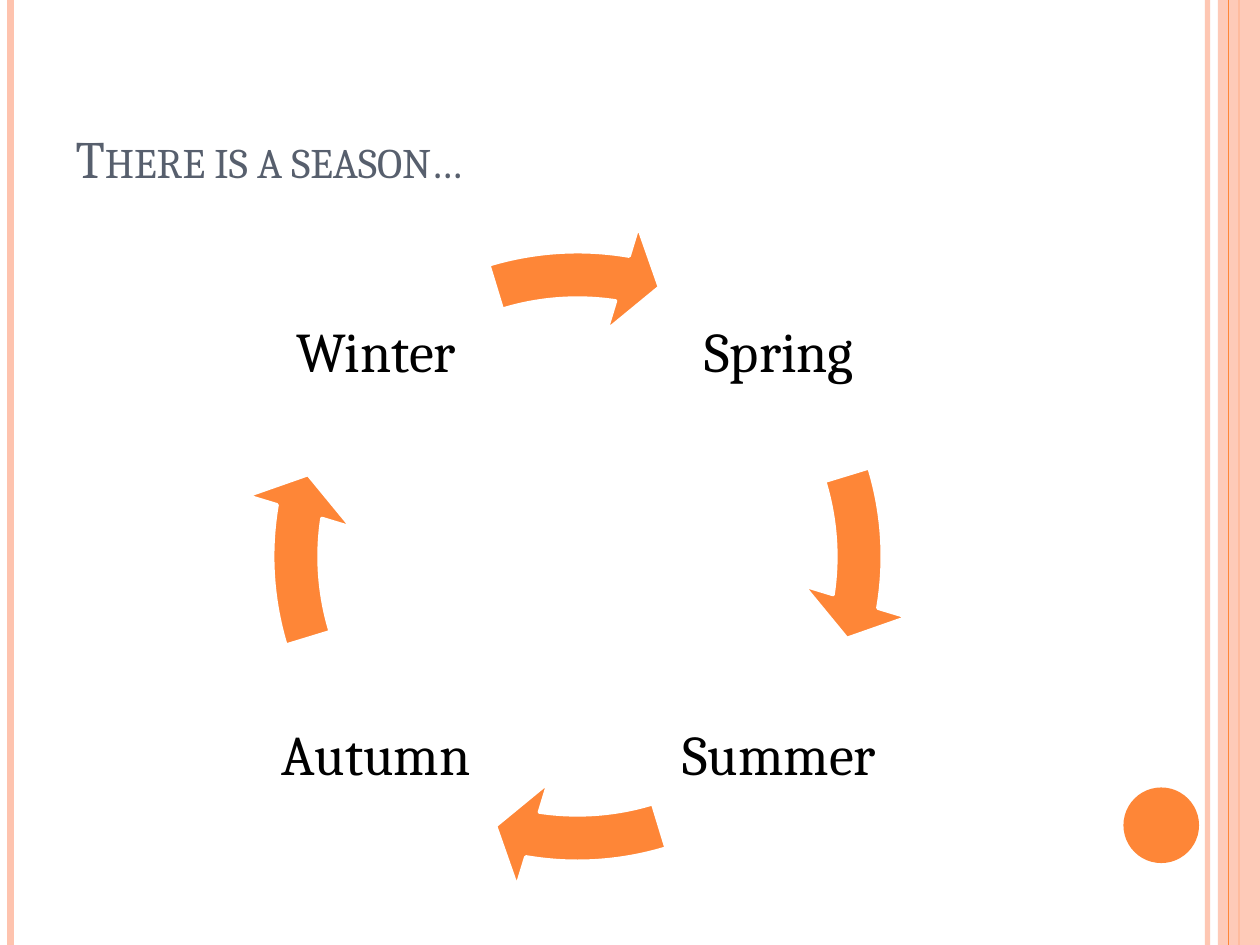
"""Build a slide showing the four seasons as a cycle of arrows."""
import pptx
import pptx.dml.color
import pptx.enum.shapes
import pptx.enum.text
import pptx.oxml
import pptx.oxml.ns
import pptx.util

Pt = pptx.util.Pt
SHAPES = pptx.enum.shapes.MSO_SHAPE
ALIGN = pptx.enum.text.PP_ALIGN
ANCHOR = pptx.enum.text.MSO_ANCHOR
COLORS = {"orange": "FE8637", "peach": "FEC3AE", "title": "575F6D",
          "text": "000000", "white": "FFFFFF"}
WIDTH, HEIGHT = 720, 540
STRIPES = [(690, "peach", 3, 93), (6, "peach", 4.5, 100), (708, "orange", 1.5, 100)]
SEASONS = [("Spring", 377.3, 134.6), ("Summer", 377.3, 365),
           ("Autumn", 147, 365), ("Winter", 147, 134.6)]
QUARTER_TURN, FULL_TURN = 54, 216


def rgb(name):
    return pptx.dml.color.RGBColor.from_string(COLORS[name])


def apply_format(target, values):
    for name, value in values.items():
        setattr(target, name, value)


def set_opacity(shape, percent):
    for color in shape._element.spPr.iter(pptx.oxml.ns.qn("a:srgbClr")):
        alpha = pptx.oxml.parse_xml(f'<a:alpha {pptx.oxml.ns.nsdecls("a")}/>')
        alpha.set("val", str(percent * 1000))
        color.append(alpha)


def add_stripe(slide, x, color, width, opacity=100):
    kind = pptx.enum.shapes.MSO_CONNECTOR.STRAIGHT
    stripe = slide.shapes.add_connector(kind, Pt(x), Pt(0), Pt(x), Pt(HEIGHT))
    stripe.line.width = Pt(width)
    stripe.line.color.rgb = rgb(color)
    if opacity < 100:
        set_opacity(stripe, opacity)
    effects = pptx.oxml.parse_xml(f'<a:effectLst {pptx.oxml.ns.nsdecls("a")}/>')
    stripe._element.spPr.append(effects)


def add_filled_shape(slide, kind, box, color):
    shape = slide.shapes.add_shape(kind, *map(Pt, box))
    shape.shadow.inherit = False
    shape.fill.solid()
    shape.fill.fore_color.rgb = rgb(color)
    shape.line.fill.background()
    return shape


def add_cycle_arrow(slide, index):
    arrow = add_filled_shape(slide, SHAPES.CIRCULAR_ARROW, (138, 126, 384, 384), "orange")
    turn = index * QUARTER_TURN
    values = (0.069, 4.653, 5.498 + turn, (205.849 + turn) % FULL_TURN, 0.081)
    for position, value in enumerate(values):
        arrow.adjustments[position] = value
    arrow.line.color.rgb = rgb("white")
    arrow.line.width = Pt(2)


def write_text(shape, text, size, color, frame_format, paragraph_format):
    apply_format(shape.text_frame, {"word_wrap": True, **frame_format})
    paragraph = shape.text_frame.paragraphs[0]
    apply_format(paragraph, paragraph_format)
    run = paragraph.add_run()
    run.text = text
    apply_format(run.font, {"size": Pt(size), "name": "Cambria"})
    run.font.color.rgb = rgb(color)
    return run


def add_title(slide, text):
    title = slide.shapes.title
    apply_format(title, {"left": Pt(36), "top": Pt(21.6), "width": Pt(588), "height": Pt(90)})
    run = write_text(title, text, 30, "title", {"vertical_anchor": ANCHOR.BOTTOM},
                     {"alignment": ALIGN.LEFT})
    run._r.get_or_add_rPr().set("cap", "small")


def add_season(slide, name, left, top):
    label = slide.shapes.add_textbox(Pt(left), Pt(top), Pt(136), Pt(136))
    margins = {f"margin_{side}": Pt(3) for side in ("left", "top", "right", "bottom")}
    write_text(label, name, 32, "text", {"vertical_anchor": ANCHOR.MIDDLE, **margins},
               {"alignment": ALIGN.CENTER, "line_spacing": 0.9})


def main():
    presentation = pptx.Presentation()
    apply_format(presentation, {"slide_width": Pt(WIDTH), "slide_height": Pt(HEIGHT)})
    slide = presentation.slides.add_slide(presentation.slide_layouts[5])
    for stripe in STRIPES:
        add_stripe(slide, *stripe)
    band = add_filled_shape(slide, SHAPES.RECTANGLE, (696, 0, 24, HEIGHT), "peach")
    set_opacity(band, 87)
    add_stripe(slide, 702, "orange", 0.75)
    add_filled_shape(slide, SHAPES.OVAL, (642, 450, 43.2, 43.2), "orange")
    add_title(slide, "There is a season…")
    for index, season in enumerate(SEASONS):
        add_season(slide, *season)
        add_cycle_arrow(slide, index)
    presentation.save("out.pptx")


if __name__ == "__main__":
    main()
